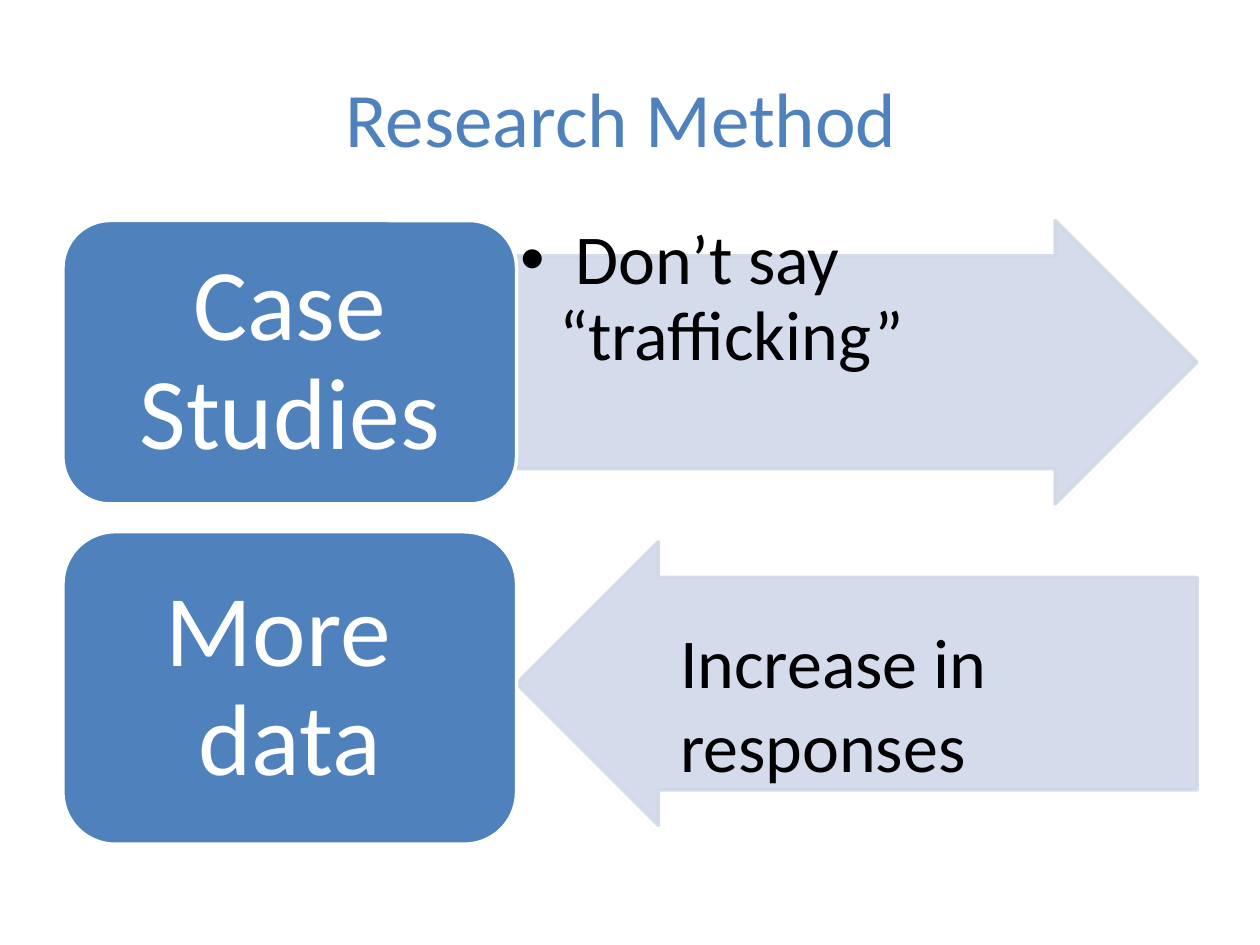
import pptx
import pptx.util
import pptx.dml.color
import pptx.enum.shapes
import pptx.enum.text
import pptx.oxml
import pptx.oxml.ns

Inch = pptx.util.Inches
Pt = pptx.util.Pt
Kind = pptx.enum.shapes.MSO_SHAPE
Align = pptx.enum.text.PP_ALIGN
Mid = pptx.enum.text.MSO_ANCHOR.MIDDLE
Top = pptx.enum.text.MSO_ANCHOR.TOP
Fit = pptx.enum.text.MSO_AUTO_SIZE
qn = pptx.oxml.ns.qn

WIDE, HIGH = 10, 7.5
LEFT, SPLIT, RIGHT = 0.05, 0.41, 0.95  # column edges, shares of the width
BLUE, PALE, WHITE, BLACK = "4F81BD", "D0D8E8", "FFFFFF", "000000"


def tint(color, code):
    color.rgb = pptx.dml.color.RGBColor.from_string(code)


def area(left, right, top, tall):
    """Turn column shares and inch rows into left, top, width, height."""
    return [Inch(n) for n in (left * WIDE, top, (right - left) * WIDE, tall)]


def place(shape, spot):
    for name, val in zip(("left", "top", "width", "height"), spot):
        setattr(shape, name, val)


def write(shape, text, size, code, frame, para):
    """Fill a shape with one paragraph in the given format."""
    body = shape.text_frame
    for name, val in {"word_wrap": True, "auto_size": Fit.NONE, **frame}.items():
        setattr(body, name, val)
    body.text = text
    line = body.paragraphs[0]
    for name, val in para.items():
        setattr(line, name, val)
    for run in line.runs:
        run.font.name, run.font.size = "Calibri", Pt(size)
        tint(run.font.color, code)
    return line


def block(slide, kind, spot, fill, edge):
    shape = slide.shapes.add_shape(kind, *spot)
    shape.shadow.inherit = False
    shape.fill.solid()
    tint(shape.fill.fore_color, fill)
    shape.line.width = Pt(2)
    tint(shape.line.color, edge)
    return shape


def arrow(slide, spot, turn=0):
    shape = block(slide, Kind.RIGHT_ARROW, spot, PALE, PALE)
    shape.adjustments[0], shape.adjustments[1] = 0.75, 0.5
    shape.rotation = turn
    # Fill and outline are slightly see-through
    for color in shape.element.spPr.iter(qn("a:srgbClr")):
        color.append(pptx.oxml.parse_xml(
            f'<a:alpha {pptx.oxml.ns.nsdecls("a")} val="90000"/>'))


def label(slide, text, spot):
    shape = block(slide, Kind.ROUNDED_RECTANGLE, spot, BLUE, WHITE)
    frame = {"vertical_anchor": Mid, "margin_left": Inch(0.24),
             "margin_right": Inch(0.24), "margin_top": Inch(0.12),
             "margin_bottom": Inch(0.12)}
    write(shape, text, 58, WHITE, frame,
          {"alignment": Align.CENTER, "line_spacing": 0.9})


def bullet(slide, text, spot):
    shape = slide.placeholders[1]
    place(shape, spot)
    slide.shapes.element.append(shape.element)  # bring in front of the arrow
    frame = {"vertical_anchor": Top}
    for side in ("left", "right", "top", "bottom"):
        frame["margin_" + side] = Inch(0.03)
    line = write(shape, text, 40, BLACK, frame,
                 {"line_spacing": 0.9, "space_before": Pt(0)})
    props = line._p.get_or_add_pPr()
    props.set("marL", str(Inch(0.31)))
    props.set("indent", str(-Inch(0.31)))


def main():
    deck = pptx.Presentation()
    deck.slide_width, deck.slide_height = Inch(WIDE), Inch(HIGH)
    slide = deck.slides.add_slide(deck.slide_layouts[1])

    # Title
    title = slide.shapes.title
    place(title, area(LEFT, RIGHT, 0.3, 1.25))
    write(title, "Research Method ", 44, BLUE, {"vertical_anchor": Mid},
          {"alignment": Align.CENTER})

    # Upper row: arrow pointing away from the label
    upper = area(SPLIT, RIGHT, 1.75, 2.25)
    arrow(slide, upper)
    bullet(slide, " Don’t say “trafficking”", upper)
    label(slide, "Case Studies", area(LEFT, SPLIT, 1.75, 2.25))

    # Lower row: arrow pointing back at the label
    arrow(slide, area(SPLIT, RIGHT, 4.3, 2.25), 180)
    label(slide, "More \vdata", area(LEFT, SPLIT, 4.22, 2.48))
    note = slide.shapes.add_textbox(*area(0.53, 0.93, 4.86, 1.45))
    write(note, "Increase in responses", 40, BLACK, {}, {})

    deck.save("out.pptx")


if __name__ == "__main__":
    main()
